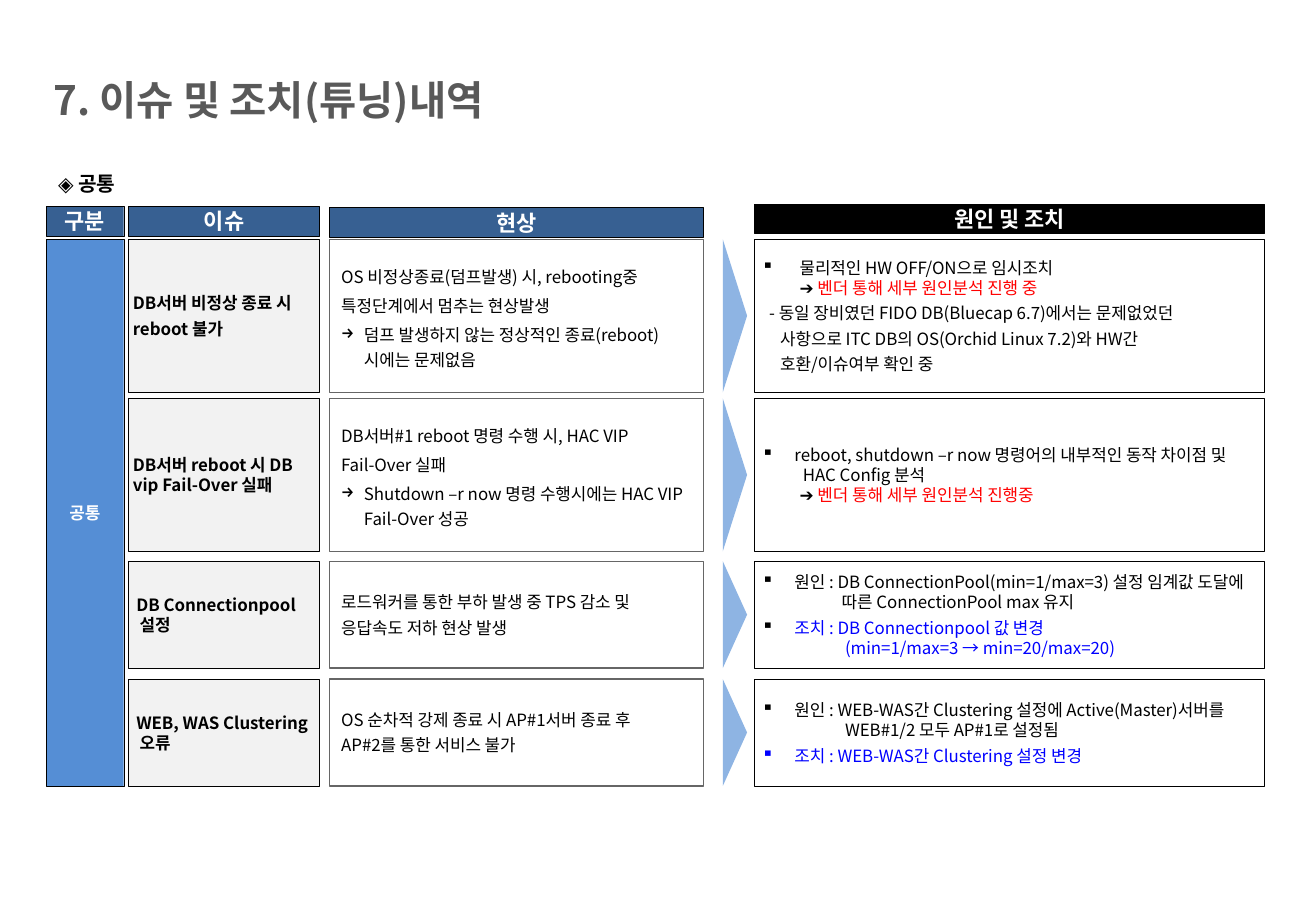
from dataclasses import dataclass

from lxml.etree import SubElement
from pptx import Presentation
from pptx.dml.color import RGBColor
from pptx.enum.shapes import MSO_SHAPE as SHAPE
from pptx.enum.text import MSO_ANCHOR as ANCHOR, PP_ALIGN as ALIGN
from pptx.oxml.ns import qn
from pptx.util import Pt


@dataclass(frozen=True)
class Theme:
    font: str = "Noto Sans CJK KR"
    title_size: float = 24
    header_size: float = 13
    section_size: float = 12
    body_size: float = 10
    title: str = "595959"
    black: str = "000000"
    white: str = "FFFFFF"
    red: str = "FF0000"
    blue: str = "0000FF"
    header: str = "376092"
    category: str = "558ED5"
    issue: str = "F2F2F2"
    arrow: str = "8EB4E3"
    symptom_line: str = "666666"


T = Theme()


@dataclass
class Line:
    text: str
    left: float = 0
    hang: float = 0
    before: float = 3
    bullet: str = ""
    color: str = T.black
    bullet_color: str = T.black
    lead: str = ""


@dataclass
class Row:
    top: float
    height: float
    issue: list
    symptom: list
    cause: list
    spacing: float = 1.0


CATEGORY, ISSUE, SYMPTOM, CAUSE = (27.36, 46), (76.3, 113), (195.1, 221.8), (447.1, 302.4)
ARROW_CENTER, ARROW_DEPTH = 435.6, 14.4
HEADER_HEIGHT = 17.4
FLUSH = (0, 3, 0, 3)
HEADERS = [
    ("구분", CATEGORY, 122.4, T.header),
    ("이슈", ISSUE, 122.4, T.header),
    ("현상", SYMPTOM, 123.1, T.header),
    ("원인 및 조치", CAUSE, 121, T.black),
]


def item(text, left=19.5, **options):
    return Line(text, left, left, bullet="▪", **options)


def arrow_item(text):
    return Line(text, 13.5, 13.5, bullet="→")


def follow(text, left, **options):
    return Line(text, left, before=0, **options)


ROWS = [
    Row(141.84, 90.7,
        [Line("DB서버 비정상 종료 시", 2.5), Line("reboot 불가", 2.5)],
        [Line("OS 비정상종료(덤프발생) 시, rebooting중"),
         Line("특정단계에서 멈추는 현상발생"),
         arrow_item("덤프 발생하지 않는 정상적인 종료(reboot)시에는 문제없음")],
        [item("물리적인 HW OFF/ON으로 임시조치", 22.5),
         follow("벤더 통해 세부 원인분석 진행 중", 22.5, lead="➔ ", color=T.red),
         Line("- 동일 장비였던 FIDO DB(Bluecap 6.7)에서는 문제없었던", 4.5),
         Line("사항으로 ITC DB의 OS(Orchid Linux 7.2)와 HW간", 11),
         Line("호환/이슈여부 확인 중", 11)],
        1.2),
    Row(236.16, 90.7,
        [Line("DB서버 reboot 시 DB", 2.5), follow("vip Fail-Over 실패", 2.5)],
        [Line("DB서버#1 reboot 명령 수행 시, HAC VIP"),
         Line("Fail-Over 실패"),
         arrow_item("Shutdown –r now 명령 수행시에는 HAC VIP Fail-Over 성공")],
        [item("reboot, shutdown –r now 명령어의 내부적인 동작 차이점 및"),
         follow("HAC Config 분석", 24.5),
         follow("벤더 통해 세부 원인분석 진행중", 22.5, lead="➔ ", color=T.red)],
        1.2),
    Row(332.64, 63.4,
        [Line("DB Connectionpool", 4.5), follow("설정", 6.5)],
        [Line("로드워커를 통한 부하 발생 중 TPS 감소 및"),
         Line("응답속도 저하 현상 발생")],
        [item("원인 : DB ConnectionPool(min=1/max=3) 설정 임계값 도달에"),
         follow("따른 ConnectionPool max 유지", 47.5),
         item("조치 : DB Connectionpool 값 변경", color=T.blue),
         follow("(min=1/max=3 → min=20/max=20)", 49.5, color=T.blue)]),
    Row(402.48, 63.4,
        [Line("WEB, WAS Clustering", 4.5), follow("오류", 6.5)],
        [Line("OS 순차적 강제 종료 시 AP#1서버 종료 후"),
         Line("AP#2를 통한 서비스 불가")],
        [item("원인 : WEB-WAS간 Clustering 설정에 Active(Master)서버를"),
         follow("WEB#1/2 모두 AP#1로 설정됨", 49.5),
         item("조치 : WEB-WAS간 Clustering 설정 변경", color=T.blue, bullet_color=T.blue)]),
]


def rgb(color):
    return RGBColor.from_string(color)


def add_run(p, text, size, color, bold):
    r = p.add_run()
    r.text = text
    r.font.size = Pt(size)
    r.font.bold = bold
    r.font.color.rgb = rgb(color)
    r.font.name = T.font
    SubElement(r.font._element, qn("a:ea"), typeface=T.font)


def set_indent(p, line):
    pPr = p._p.get_or_add_pPr()
    pPr.set("marL", str(Pt(line.left)))
    pPr.set("indent", str(-Pt(line.hang)))
    if line.bullet:
        clr = SubElement(pPr, qn("a:buClr"))
        SubElement(clr, qn("a:srgbClr"), val=line.bullet_color)
        SubElement(pPr, qn("a:buChar"), char=line.bullet)


def write(sp, lines, size=T.body_size, bold=False, align=ALIGN.LEFT,
          spacing=1.0, insets=FLUSH, anchor=ANCHOR.MIDDLE):
    tf = sp.text_frame
    tf.word_wrap = True
    tf.vertical_anchor = anchor
    tf.margin_left, tf.margin_top, tf.margin_right, tf.margin_bottom = map(Pt, insets)
    for i, line in enumerate(lines):
        p = tf.add_paragraph() if i else tf.paragraphs[0]
        set_indent(p, line)
        p.alignment = align
        p.line_spacing = spacing
        p.space_before = Pt(line.before if i else 0)
        if line.lead:
            add_run(p, line.lead, size, T.black, bold)
        add_run(p, line.text, size, line.color, bold)


def add_box(slide, column, top, height, fill=None, line=T.black, width=0.25):
    left, box_width = column
    sp = slide.shapes.add_shape(SHAPE.RECTANGLE, Pt(left), Pt(top), Pt(box_width), Pt(height))
    sp.shadow.inherit = False
    if fill:
        sp.fill.solid()
        sp.fill.fore_color.rgb = rgb(fill)
    else:
        sp.fill.background()
    sp.line.color.rgb = rgb(line)
    sp.line.width = Pt(width)
    return sp


def add_arrow(slide, top, height):
    sp = slide.shapes.add_shape(
        SHAPE.ISOSCELES_TRIANGLE, Pt(ARROW_CENTER - height / 2),
        Pt(top + (height - ARROW_DEPTH) / 2), Pt(height), Pt(ARROW_DEPTH))
    sp.rotation = 90
    sp.shadow.inherit = False
    sp.fill.solid()
    sp.fill.fore_color.rgb = rgb(T.arrow)
    sp.line.fill.background()


def add_label(slide, left, top, width, height, line, size, **options):
    sp = slide.shapes.add_textbox(Pt(left), Pt(top), Pt(width), Pt(height))
    write(sp, [line], size, True, **options)


def add_row(slide, row):
    write(add_box(slide, ISSUE, row.top, row.height, T.issue), row.issue, bold=True)
    symptom = add_box(slide, SYMPTOM, row.top, row.height, line=T.symptom_line, width=0.75)
    write(symptom, row.symptom, spacing=row.spacing, insets=(7.2, 3.6, 7.2, 3.6))
    add_arrow(slide, row.top, row.height)
    cause = add_box(slide, CAUSE, row.top, row.height, T.white)
    write(cause, row.cause, insets=(4.3, 3, 0, 3))


def main():
    prs = Presentation()
    prs.slide_width, prs.slide_height = Pt(780), Pt(540)
    slide = prs.slides.add_slide(prs.slide_layouts[6])
    add_label(slide, 24.5, 45, 580, 28, Line("7. 이슈 및 조치(튜닝)내역", color=T.title),
              T.title_size, insets=(7.2, 0, 7.2, 0))
    add_label(slide, 27.36, 90.7, 711, 26, Line("◈ 공통"), T.section_size,
              spacing=1.5, insets=(7.2, 3.6, 7.2, 3.6), anchor=ANCHOR.TOP)
    for text, column, top, fill in HEADERS:
        sp = add_box(slide, column, top, HEADER_HEIGHT, fill)
        write(sp, [Line(text, color=T.white)], T.header_size, True, ALIGN.CENTER)
    first, last = ROWS[0], ROWS[-1]
    sp = add_box(slide, CATEGORY, first.top, last.top + last.height - first.top, T.category)
    write(sp, [Line("공통", color=T.white)], bold=True, align=ALIGN.CENTER)
    for row in ROWS:
        add_row(slide, row)
    prs.save("out.pptx")


if __name__ == "__main__":
    main()
